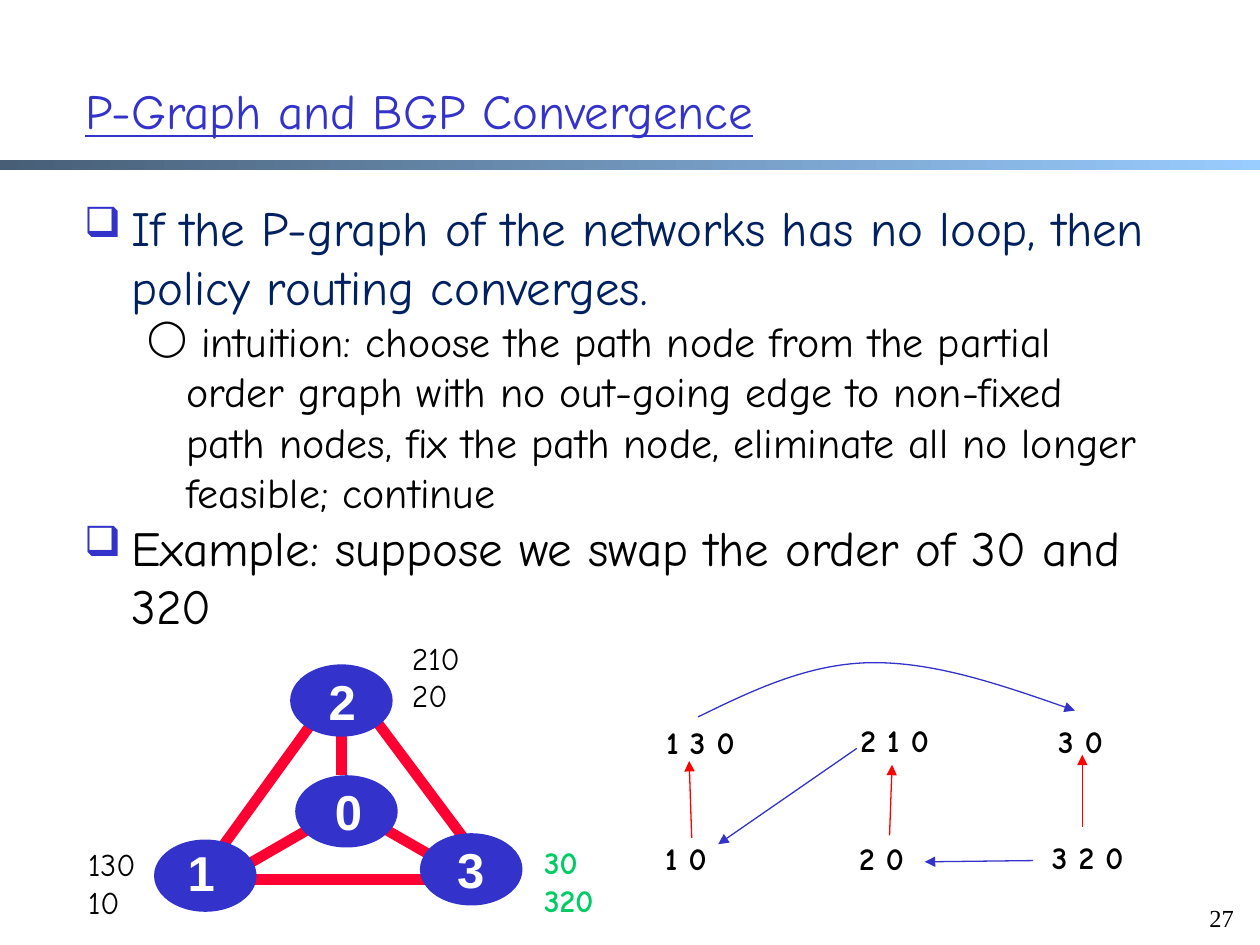
from typing import NamedTuple

from lxml.etree import SubElement
from pptx import Presentation
from pptx.dml.color import RGBColor
from pptx.enum.shapes import MSO_CONNECTOR as Connector, MSO_SHAPE as Preset
from pptx.enum.text import MSO_ANCHOR as Anchor
from pptx.oxml.ns import qn
from pptx.util import Inches, Pt

BLUE = RGBColor(0x33, 0x33, 0xCC)
NAVY = RGBColor(0x00, 0x20, 0x60)
BLACK = RGBColor(0x00, 0x00, 0x00)
WHITE = RGBColor(0xFF, 0xFF, 0xFF)
RED = RGBColor(0xFF, 0x00, 0x00)
CRIMSON = RGBColor(0xFF, 0x00, 0x33)
GREEN = RGBColor(0x00, 0xCC, 0x66)
SLATE = RGBColor(0x47, 0x5E, 0x76)
SKY = RGBColor(0x99, 0xCC, 0xFF)
HAND = "Comic Neue"

# The slide is a grid of 100 columns by 75 rows of square cells
COLUMNS, ROWS = 100, 75
CELL = Inches(10) / COLUMNS


class Bullet(NamedTuple):
    text: str
    mark: str
    size: int
    color: RGBColor
    margin: float
    hang: float
    mark_color: RGBColor = BLACK
    level: int = 0


class PathNode(NamedTuple):
    text: str
    col: float
    row: float


class Edge(NamedTuple):
    start: tuple[float, float]
    end: tuple[float, float]
    color: RGBColor = CRIMSON
    width: float = 6
    arrow: bool = False


class Router(NamedTuple):
    digit: str
    col: float
    row: float
    digit_col: float
    digit_row: float


class Ranking(NamedTuple):
    routes: str
    col: float
    row: float
    color: RGBColor = BLACK
    bold: bool = False


BULLETS = [
    Bullet("If the P-graph of the networks has no loop, then policy routing converges.",
           "❑", 28, NAVY, 3.75, 3.75, BLUE),
    Bullet(" intuition: choose the path node from the partial order graph with no "
           "out-going edge to non-fixed path nodes, fix the path node, eliminate all "
           "no longer feasible; continue", "◯", 24, BLACK, 8.13, 3.13, level=1),
    Bullet("Example: suppose we swap the order of 30 and 320",
           "❑", 28, BLACK, 3.75, 3.75, BLUE),
]
PATH_NODES = [
    PathNode("1 3 0", 51.9, 56.9), PathNode("2 1 0", 67.3, 56.7), PathNode("3 0", 83, 56.8),
    PathNode("1 0", 51.8, 66.1), PathNode("2 0", 67.2, 66.1), PathNode("3 2 0", 82.5, 66),
]
PREFERENCES = [
    Edge((68, 59.4), (57, 67), BLUE, 0.75, True),
    Edge((82, 68.3), (73.4, 68.4), BLUE, 0.75, True),
    Edge((54.9, 66.5), (54.7, 60.4), RED, 0.75, True),
    Edge((70.6, 66.3), (70.8, 60.7), RED, 0.75, True),
    Edge((85.9, 65.6), (85.9, 59.9), RED, 0.75, True),
]
# Start point, then two Bézier segments of three points each
ARC = [(55.4, 56.9), (59.7, 54.8), (64.1, 52.7), (69, 52.6),
       (74, 52.5), (79.6, 54.4), (85.3, 56.4)]
LINKS = [
    Edge((38.8, 69.2), (28.5, 55.4)), Edge((26.2, 55.4), (15.4, 70.3)),
    Edge((27.1, 53.8), (27.1, 61.5)), Edge((26.6, 64.6), (19.5, 68.7)),
    Edge((35.6, 68.7), (30.2, 65.6)), Edge((39.7, 69.8), (15.4, 69.8)),
]
ROUTERS = [
    Router("2", 23.1, 52.8, 25.1, 52.8), Router("0", 23.5, 61.6, 25.6, 61.5),
    Router("3", 33.4, 66.2, 35.3, 66.1), Router("1", 12.3, 66.7, 13.9, 66.4),
]
RANKINGS = [
    Ranking("210\n20", 31.7, 50.2), Ranking("130\n10", 6, 66.6),
    Ranking("30\n320", 42.2, 66.4, GREEN, True),
]


def cells(count: float) -> int:
    return round(count * CELL)


def add_text(shapes, text: str, col: float, row: float, width: float, height: float, *,
             size: int = 18, color: RGBColor = BLACK, font: str = HAND,
             bold: bool = False, underline: bool = False, wrap: bool = True,
             anchor=Anchor.TOP):
    """Add a text box with one paragraph per line of text."""
    frame = shapes.add_textbox(*map(cells, (col, row, width, height))).text_frame
    frame.word_wrap = wrap
    frame.vertical_anchor = anchor
    frame.text = text
    for paragraph in frame.paragraphs:
        style = paragraph.runs[0].font
        style.name, style.size, style.bold = font, Pt(size), bold
        style.underline = underline
        style.color.rgb = color
    return frame


def add_bullets(shapes, bullets: list[Bullet]) -> None:
    frame = add_text(shapes, "\n".join(b.text for b in bullets), 5.7, 15.2, 86.1, 53.1)
    for paragraph, bullet in zip(frame.paragraphs, bullets):
        paragraph.level = bullet.level
        style = paragraph.runs[0].font
        style.size = Pt(bullet.size)
        style.color.rgb = bullet.color
        props = paragraph._p.get_or_add_pPr()
        props.set("marL", str(cells(bullet.margin)))
        props.set("indent", str(-cells(bullet.hang)))
        mark_color = SubElement(props, qn("a:buClr"))
        SubElement(mark_color, qn("a:srgbClr"), val=str(bullet.mark_color))
        SubElement(props, qn("a:buSzPct"), val="85000")
        SubElement(props, qn("a:buChar"), char=bullet.mark)


def style_line(line, color: RGBColor, width: float, arrow: bool) -> None:
    line.color.rgb = color
    line.width = Pt(width)
    if arrow:
        SubElement(line._get_or_add_ln(), qn("a:tailEnd"), type="triangle")


def add_edge(shapes, edge: Edge) -> None:
    ends = map(cells, (*edge.start, *edge.end))
    connector = shapes.add_connector(Connector.STRAIGHT, *ends)
    style_line(connector.line, edge.color, edge.width, edge.arrow)
    SubElement(connector._element.spPr, qn("a:effectLst"))


def add_arc(shapes, points: list[tuple[float, float]]) -> None:
    """Draw an open curve: every three line steps become one Bézier segment."""
    start, *rest = [(cells(x), cells(y)) for x, y in points]
    builder = shapes.build_freeform(*start)
    builder.add_line_segments(rest, close=False)
    arc = builder.convert_to_shape()
    steps = list(arc._element.iter(qn("a:lnTo")))
    outline = steps[0].getparent()
    for first in range(0, len(steps), 3):
        curve = SubElement(outline, qn("a:cubicBezTo"))
        for step in steps[first:first + 3]:
            curve.append(step[0])
            outline.remove(step)
    arc.shadow.inherit = False
    arc.fill.background()
    style_line(arc.line, BLUE, 0.75, True)


def add_router(shapes, router: Router) -> None:
    disc = shapes.add_shape(Preset.OVAL, *map(cells, (router.col, router.row, 8, 5.6)))
    disc.shadow.inherit = False
    disc.fill.solid()
    disc.fill.fore_color.rgb = BLUE
    style_line(disc.line, BLUE, 1, False)
    add_text(shapes, router.digit, router.digit_col, router.digit_row, 4.2, 5.7,
             size=28, color=WHITE, font="Arial", bold=True, wrap=False)


def add_rule(shapes) -> None:
    rule = shapes.add_shape(Preset.RECTANGLE, *map(cells, (0, 12.7, COLUMNS, 0.8)))
    rule.shadow.inherit = False
    rule.line.fill.background()
    rule.fill.gradient()
    rule.fill.gradient_angle = 0
    for stop, color in zip(rule.fill.gradient_stops, (SLATE, SKY)):
        stop.color.rgb = color


def main() -> None:
    deck = Presentation()
    deck.slide_width, deck.slide_height = cells(COLUMNS), cells(ROWS)
    shapes = deck.slides.add_slide(deck.slide_layouts[6]).shapes

    # Heading and statement
    add_rule(shapes)
    add_text(shapes, "P-Graph and BGP Convergence", 5.8, 2.5, 87.8, 12.5,
             size=28, color=BLUE, underline=True, anchor=Anchor.MIDDLE)
    add_bullets(shapes, BULLETS)

    # P-graph of the paths
    for node in PATH_NODES:
        add_text(shapes, node.text, node.col, node.row, 12, 4, bold=True)
    for preference in PREFERENCES:
        add_edge(shapes, preference)
    add_arc(shapes, ARC)

    # Network with the ranked routes of each router
    for link in LINKS:
        add_edge(shapes, link)
    for router in ROUTERS:
        add_router(shapes, router)
    for ranking in RANKINGS:
        add_text(shapes, ranking.routes, ranking.col, ranking.row, 6.2, 7,
                 color=ranking.color, bold=ranking.bold, wrap=False)

    # Page number
    add_text(shapes, "27", 95, 71.2, 5, 5, size=14, font="Times New Roman")
    deck.save("out.pptx")


if __name__ == "__main__":
    main()
